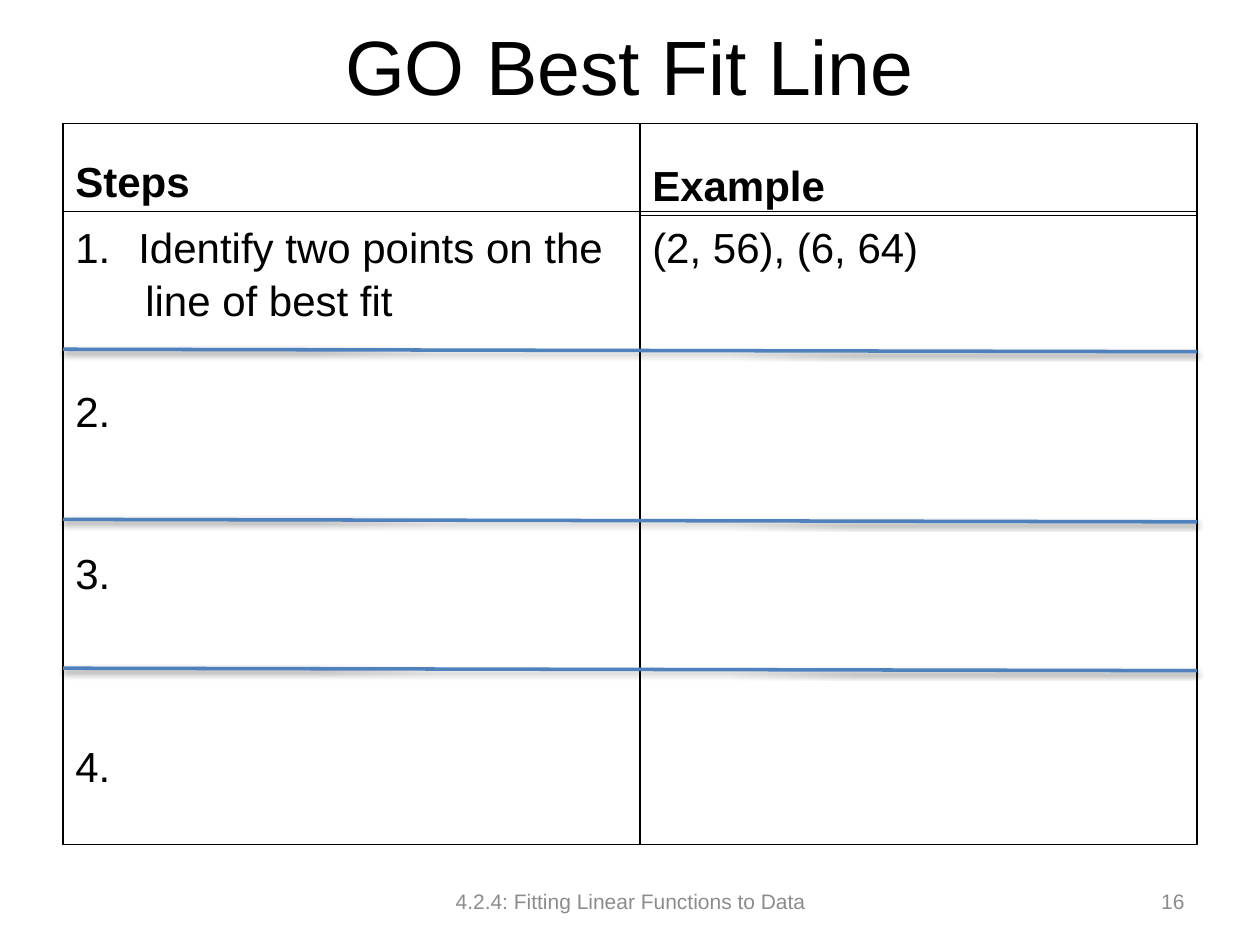
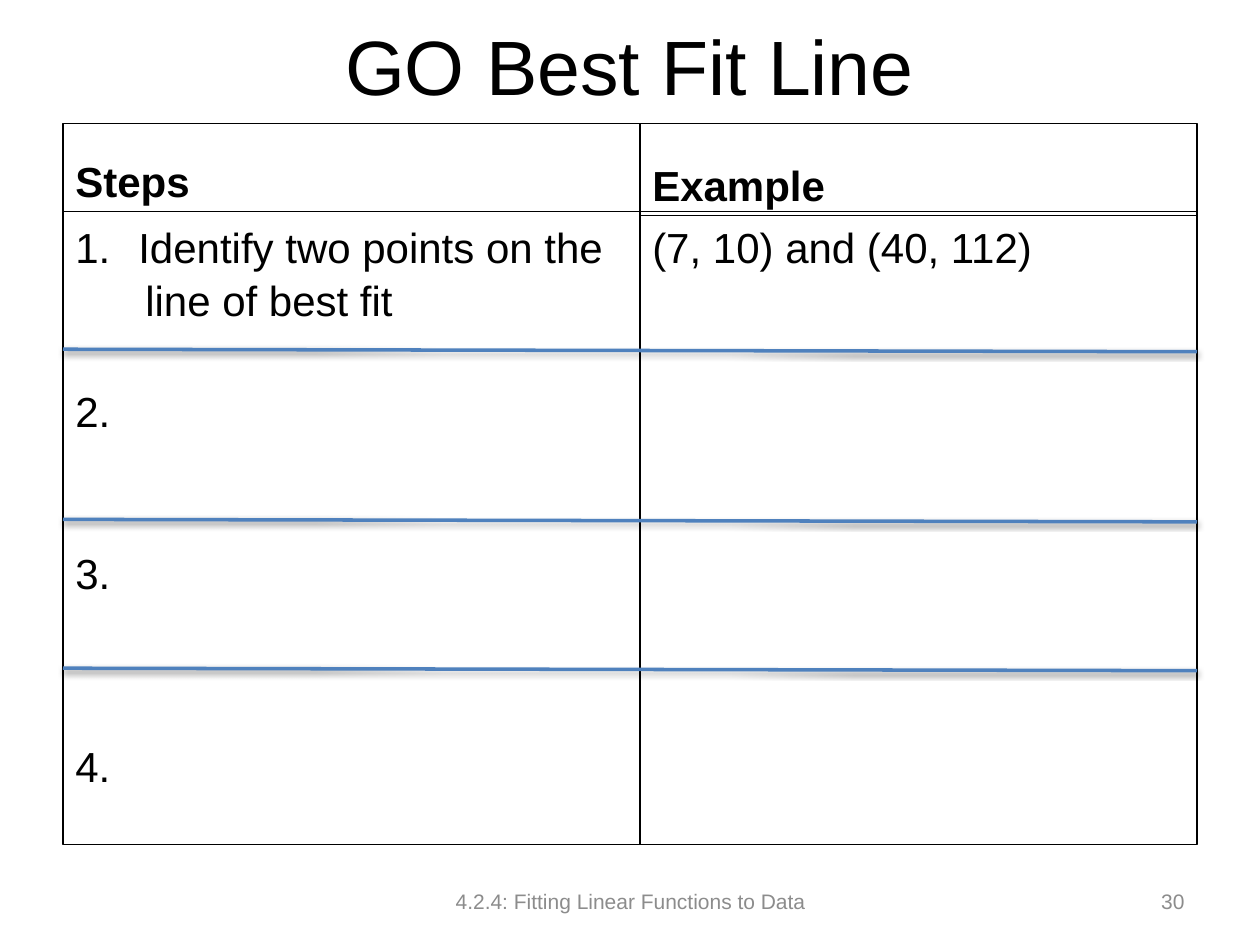
from lxml import etree
from pptx import Presentation
from pptx.dml import color as dml
from pptx.enum import shapes, text
from pptx.oxml import ns
from pptx.util import Cm, Pt

FONT = "Arial"
INK, GREY, BLUE = "000000", "8C8C8C", "4F81BD"
LEFT, WIDTH, SPLIT = 1.27, 22.86, 11.63
STEPS = [
    ("Identify two points on the", 0, 1.27),
    ("line of best fit", 1.5, 1.41),
    ("2.", 34.5, 0),
    ("3.", 64, 0),
    ("4.", 81, 0),
]
RULES = (2.77, 6.2, 9.2)
PAGES = [("(2, 56), (6, 64)", "16"), ("(7, 10) and (40, 112)", "30")]


def paint(code):
    """Turn a hex string into a colour."""
    return dml.RGBColor.from_string(code)


def add(parent, tag, **attrs):
    """Append a drawing element with attributes and return it."""
    node = etree.SubElement(parent, ns.qn(tag))
    for key, value in attrs.items():
        node.set(key, str(value))
    return node


def write(shape, lines, size, ink=INK, bold=False, align="LEFT", anchor="MIDDLE"):
    """Fill a shape with lines of (words, space before, indent)."""
    frame = shape.text_frame
    frame.word_wrap = True
    frame.vertical_anchor = getattr(text.MSO_ANCHOR, anchor)
    for i, (words, gap, indent) in enumerate(lines):
        para = frame.add_paragraph() if i else frame.paragraphs[0]
        para.text = words
        para.alignment = getattr(text.PP_ALIGN, align)
        para.space_before = Pt(gap)
        para.font.name, para.font.size, para.font.bold = FONT, Pt(size), bold
        para.font.color.rgb = paint(ink)
        if indent:
            para._p.get_or_add_pPr().set("marL", str(Cm(indent)))
    return frame


def label(slide, box, words, size, ink, align):
    """Place one line of plain text in a box."""
    area = slide.shapes.add_textbox(*map(Cm, box))
    write(area, [(words, 0, 0)], size, ink, align=align)


def cell(slide, box, lines, bold=False, anchor="TOP"):
    """Place an outlined cell with its text."""
    rect = slide.shapes.add_shape(shapes.MSO_SHAPE.RECTANGLE, *map(Cm, box))
    rect.shadow.inherit = False
    rect.fill.background()
    rect.line.color.rgb = paint(INK)
    rect.line.width = Pt(0.75)
    frame = write(rect, lines, 24, bold=bold, anchor=anchor)
    if anchor == "TOP":
        frame.margin_top = Cm(0.2)
    return frame


def rule(slide, left, top, width):
    """Draw a slightly sloping blue line with a soft shadow."""
    line = slide.shapes.add_connector(
        shapes.MSO_CONNECTOR.STRAIGHT,
        Cm(left), Cm(top), Cm(left + width), Cm(top + 0.05))
    line.line.color.rgb = paint(BLUE)
    line.line.width = Pt(2)
    effects = add(line._element.spPr, "a:effectLst")
    shade = add(effects, "a:outerShdw", blurRad=Pt(3.1), dist=Pt(1.6),
                dir=5400000, rotWithShape=0)
    add(add(shade, "a:srgbClr", val=INK), "a:alpha", val=38000)


def grid(slide, box, example):
    """Draw the steps and example columns and their rules."""
    left, top, width, height = box
    mid, rest, head = left + SPLIT, width - SPLIT, 1.78
    cell(slide, (left, top, SPLIT, head), [("Steps", 0, 0)], True, "BOTTOM")
    steps = cell(slide, (left, top + head, SPLIT, height - head), STEPS)
    first = steps.paragraphs[0]._p.get_or_add_pPr()
    first.set("indent", str(-Cm(1.27)))
    number = etree.Element(ns.qn("a:buAutoNum"), type="arabicPeriod")
    first.find(ns.qn("a:spcBef")).addnext(number)
    cell(slide, (mid, top, rest, head + 0.08), [("Example", 0, 0)], True, "BOTTOM")
    cell(slide, (mid, top + head, rest, height - head), [(example, 0, 0)])
    for drop in RULES:
        rule(slide, left, top + head + drop, width)


def footer(slide, top, page):
    """Write the lesson name and page number."""
    label(slide, (8.69, top, 8.05, 1.02),
          "4.2.4: Fitting Linear Functions to Data", 12, GREY, "CENTER")
    label(slide, (18.21, top, 5.92, 1.02), page, 12, GREY, "RIGHT")


def main():
    """Build and save the slides."""
    deck = Presentation()
    deck.slide_width, deck.slide_height = Cm(25.4), Cm(19.05)
    for example, page in PAGES:
        slide = deck.slides.add_slide(deck.slide_layouts[6])
        label(slide, (LEFT, -0.28, WIDTH, 3.18), "GO Best Fit Line", 44, INK, "CENTER")
        grid(slide, (LEFT, 2.49, WIDTH, 14.53), example)
        footer(slide, 17.65, page)
    deck.save("out.pptx")


if __name__ == "__main__":
    main()
